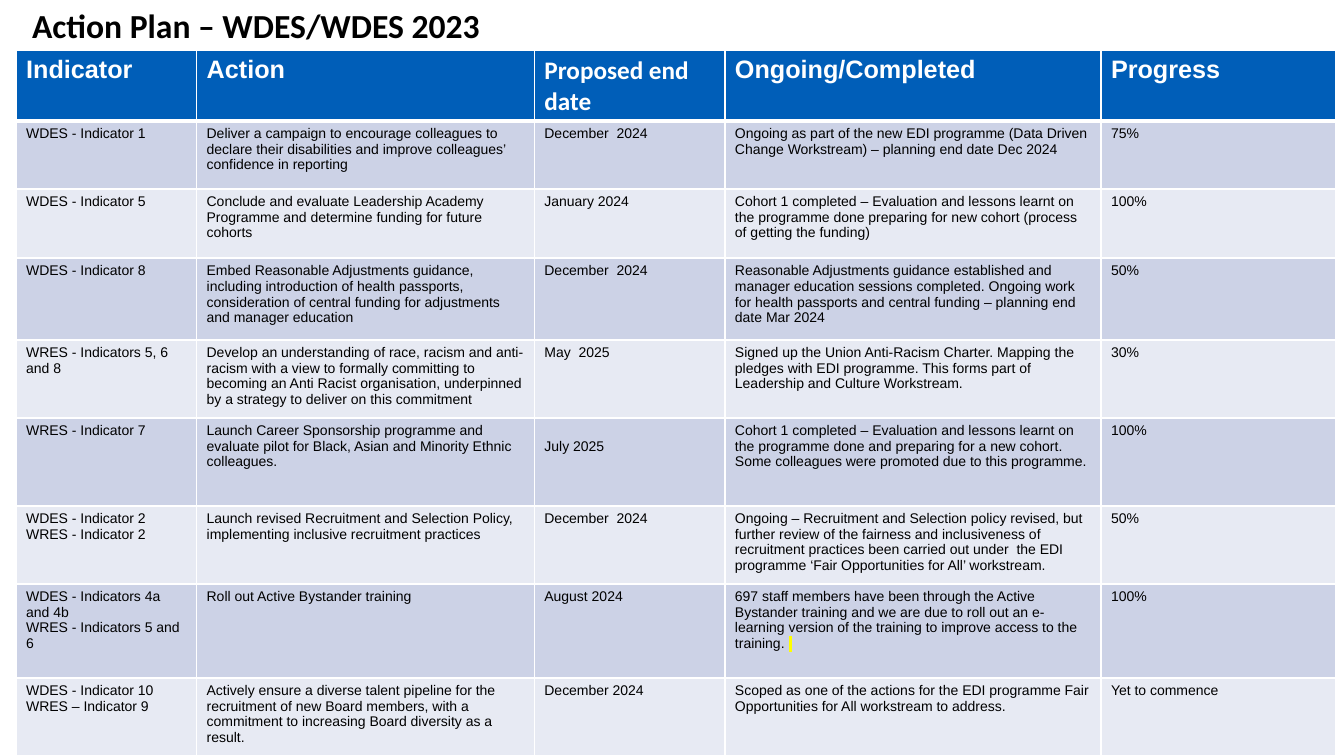
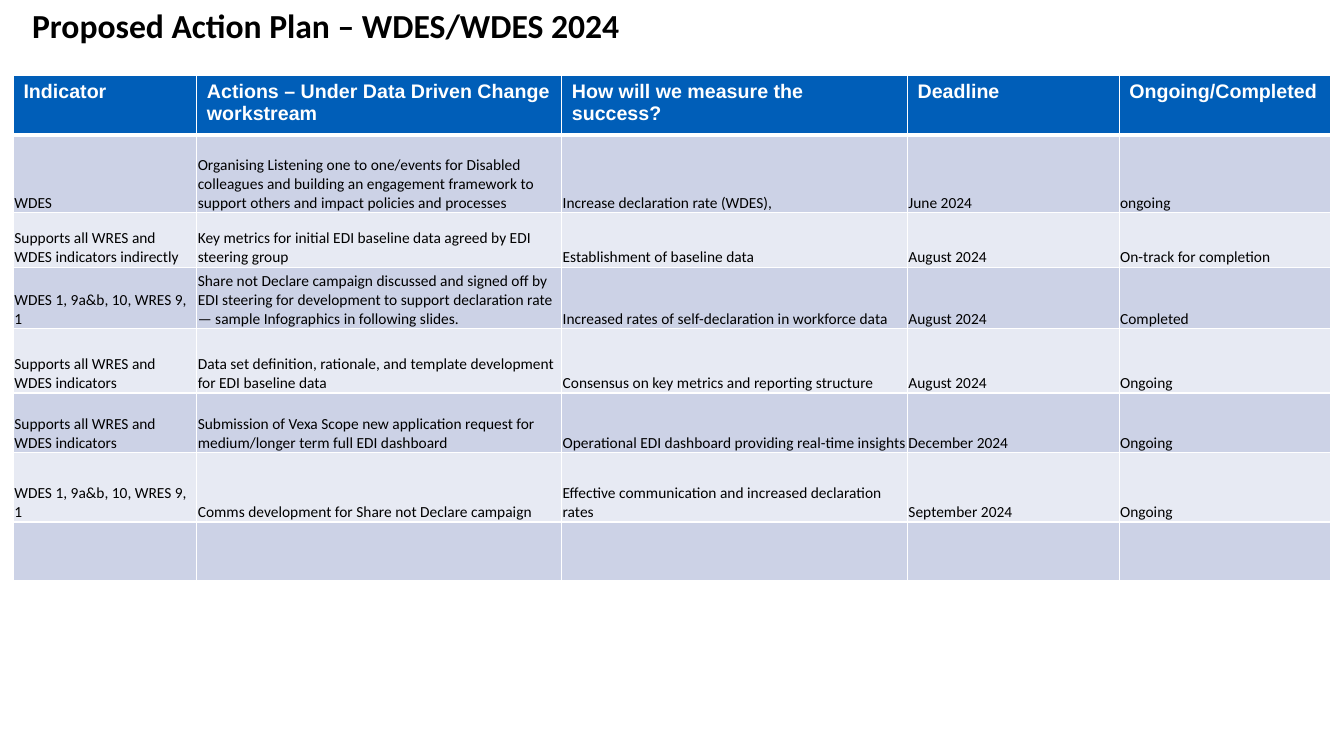
import lxml.etree
import pptx
import pptx.dml.color
import pptx.enum.text
import pptx.oxml.ns
import pptx.util

COLOURS = {
    "header": "005EB8",
    "odd": "CCD2E6",
    "even": "E7EAF3",
    "rule": "FFFFFF",
    "light": "FFFFFF",
    "dark": "000000",
    "mark": "FFFF00",
}


def rgb(name):
    return pptx.dml.color.RGBColor.from_string(COLOURS[name])


def add_xml(parent, tag, **attributes):
    return lxml.etree.SubElement(parent, pptx.oxml.ns.qn(tag), attributes)


def write(frame, text, size, font="Arial", colour="dark", bold=False, marked_tail=""):
    """Fill a text frame, one paragraph a line; marked_tail is highlighted at the end."""
    pieces = [(line, False) for line in text.split("\n")]
    if marked_tail:
        pieces.append((marked_tail, True))
    for index, (piece, marked) in enumerate(pieces):
        if index == 0:
            para = frame.paragraphs[0]
        elif not marked:
            para = frame.add_paragraph()
        span = para.add_run()
        span.text = piece
        span.font.size = pptx.util.Pt(size)
        span.font.bold = bold
        span.font.color.rgb = rgb(colour)
        if marked:
            highlight = add_xml(span.font._element, "a:highlight")
            add_xml(highlight, "a:srgbClr", val=COLOURS["mark"])
        span.font.name = font


def set_borders(cell, top, bottom):
    """Draw the four cell borders; must run before the cell gets its fill."""
    properties = cell._tc.get_or_add_tcPr()
    for side, points in (("L", 1), ("R", 1), ("T", top), ("B", bottom)):
        line = add_xml(properties, f"a:ln{side}", w=str(pptx.util.Pt(points)))
        fill = add_xml(line, "a:solidFill")
        add_xml(fill, "a:srgbClr", val=COLOURS["rule"])


class ActionPlan:
    """Holds the deck and its current slide; lengths are percent of the slide's size."""

    def __init__(self):
        self.deck = pptx.Presentation()
        self.deck.slide_width = pptx.util.Inches(13.33)
        self.deck.slide_height = pptx.util.Inches(7.5)
        self.page = None

    def across(self, share):
        return round(self.deck.slide_width * share / 100)

    def down(self, share):
        return round(self.deck.slide_height * share / 100)

    def add_page(self, title):
        self.page = self.deck.slides.add_slide(self.deck.slide_layouts[6])
        box = self.page.shapes.add_textbox(
            self.across(1.65), 0, self.across(59.85), self.down(6.67))
        box.text_frame.word_wrap = True
        write(box.text_frame, title, size=24, font="Calibri", bold=True)

    def add_table(self, left, top, widths, heights, header, rows, header_size, body, tight=False):
        """Add a banded table; a cell is a text or a dict of text, format and top margin."""
        table = self.page.shapes.add_table(
            len(heights), len(widths), self.across(left), self.down(top),
            self.across(sum(widths)), self.down(sum(heights))).table
        table.horz_banding = False
        for column, width in zip(table.columns, widths):
            column.width = self.across(width)
        for row, height in zip(table.rows, heights):
            row.height = self.down(height)
        header_format = {"size": header_size, "colour": "light", "bold": True}
        for row_index, entries in enumerate([header, *rows]):
            is_header = row_index == 0
            band = "header" if is_header else ("even", "odd")[row_index % 2]
            for column_index, entry in enumerate(entries):
                cell = table.cell(row_index, column_index)
                set_borders(cell, 3 if row_index == 1 else 1, 3 if is_header else 1)
                cell.fill.solid()
                cell.fill.fore_color.rgb = rgb(band)
                if tight and not is_header:
                    self.tighten(cell)
                style = dict(header_format if is_header else body)
                style.update(entry if isinstance(entry, dict) else {"text": entry})
                if "margin_top" in style:
                    cell.margin_top = self.down(style.pop("margin_top"))
                if style["text"]:
                    write(cell.text_frame, **style)

    def tighten(self, cell):
        cell.vertical_anchor = pptx.enum.text.MSO_ANCHOR.BOTTOM
        cell.margin_left = cell.margin_right = self.across(0.07)
        cell.margin_top = self.down(0.13)
        cell.margin_bottom = 0


PLAN_2023 = [
    ["WDES - Indicator 1",
     "Deliver a campaign to encourage colleagues to declare their disabilities and improve "
     "colleagues’ confidence in reporting",
     "December  2024",
     "Ongoing as part of the new EDI programme (Data Driven Change Workstream) – planning end "
     "date Dec 2024",
     "75%"],
    ["WDES - Indicator 5",
     "Conclude and evaluate Leadership Academy Programme and determine funding for future cohorts",
     "January 2024",
     "Cohort 1 completed – Evaluation and lessons learnt on the programme done preparing for new "
     "cohort (process of getting the funding)",
     "100%"],
    ["WDES - Indicator 8",
     "Embed Reasonable Adjustments guidance, including introduction of health passports, "
     "consideration of central funding for adjustments and manager education",
     "December  2024",
     "Reasonable Adjustments guidance established and manager education sessions completed. "
     "Ongoing work for health passports and central funding – planning end date Mar 2024",
     "50%"],
    ["WRES - Indicators 5, 6 and 8",
     "Develop an understanding of race, racism and anti-racism with a view to formally committing "
     "to becoming an Anti Racist organisation, underpinned by a strategy to deliver on this "
     "commitment",
     "May  2025",
     "Signed up the Union Anti-Racism Charter. Mapping the pledges with EDI programme. This forms "
     "part of Leadership and Culture Workstream.",
     "30%"],
    ["WRES - Indicator 7",
     "Launch Career Sponsorship programme and evaluate pilot for Black, Asian and Minority Ethnic "
     "colleagues.",
     {"text": "July 2025", "margin_top": 2.75},
     "Cohort 1 completed – Evaluation and lessons learnt on the programme done and preparing for "
     "a new cohort. Some colleagues were promoted due to this programme.",
     "100%"],
    ["WDES - Indicator 2\nWRES - Indicator 2",
     "Launch revised Recruitment and Selection Policy, implementing inclusive recruitment "
     "practices",
     "December  2024",
     "Ongoing – Recruitment and Selection policy revised, but further review of the fairness and "
     "inclusiveness of recruitment practices been carried out under  the EDI programme ‘Fair "
     "Opportunities for All’ workstream.",
     "50%"],
    ["WDES - Indicators 4a and 4b\nWRES - Indicators 5 and 6",
     "Roll out Active Bystander training",
     "August 2024",
     {"text": "697 staff members have been through the Active Bystander training and we are due "
              "to roll out an e-learning version of the training to improve access to the "
              "training. ",
      "marked_tail": " "},
     "100%"],
    ["WDES - Indicator 10\nWRES – Indicator 9",
     "Actively ensure a diverse talent pipeline for the recruitment of new Board members, with a "
     "commitment to increasing Board diversity as a result.",
     "December 2024",
     "Scoped as one of the actions for the EDI programme Fair Opportunities for All workstream "
     "to address.",
     "Yet to commence"],
]

PLAN_2024 = [
    ["WDES",
     "Organising Listening one to one/events for Disabled colleagues and building an engagement "
     "framework to support others and impact policies and processes",
     "Increase declaration rate (WDES),", "June 2024", "ongoing"],
    ["Supports all WRES and WDES indicators indirectly",
     "Key metrics for initial EDI baseline data agreed by EDI steering group",
     "Establishment of baseline data", "August 2024", "On-track for completion"],
    ["WDES 1, 9a&b, 10, WRES 9, 1",
     "Share not Declare campaign discussed and signed off by EDI steering for development to "
     "support declaration rate— sample Infographics in following slides.",
     "Increased rates of self-declaration in workforce data", "August 2024", "Completed"],
    ["Supports all WRES and WDES indicators",
     "Data set definition, rationale, and template development for EDI baseline data",
     "Consensus on key metrics and reporting structure", "August 2024", "Ongoing"],
    ["Supports all WRES and WDES indicators",
     "Submission of Vexa Scope new application request for medium/longer term full EDI dashboard",
     "Operational EDI dashboard providing real-time insights", "December 2024", "Ongoing"],
    ["WDES 1, 9a&b, 10, WRES 9, 1",
     "Comms development for Share not Declare campaign",
     "Effective communication and increased declaration rates", "September 2024", "Ongoing"],
    [""] * 5,
]


def main():
    plan = ActionPlan()

    plan.add_page("Action Plan – WDES/WDES 2023")
    plan.add_table(
        left=1.2, top=6.67,
        widths=[13.43, 25.13, 14.18, 27.98, 17.48],
        heights=[9.26, 9, 9.13, 10.85, 10.32, 11.64, 10.32, 12.43, 10.19],
        header=["Indicator", "Action", {"text": "Proposed end date", "font": "Calibri"},
                "Ongoing/Completed", "Progress"],
        rows=PLAN_2023, header_size=18, body={"size": 10})

    plan.add_page("Proposed Action Plan – WDES/WDES 2024")
    plan.add_table(
        left=1, top=10,
        widths=[13.65, 27.15, 25.73, 15.75, 15.75],
        heights=[7.87, 10.27, 7.2, 8.13, 8.53, 7.87, 9.2, 7.73],
        header=["Indicator", "Actions – Under Data Driven Change workstream",
                "How will we measure the success?", "Deadline", "Ongoing/Completed"],
        rows=PLAN_2024, header_size=14, body={"size": 11, "font": "Calibri"}, tight=True)

    plan.deck.save("out.pptx")


if __name__ == "__main__":
    main()
